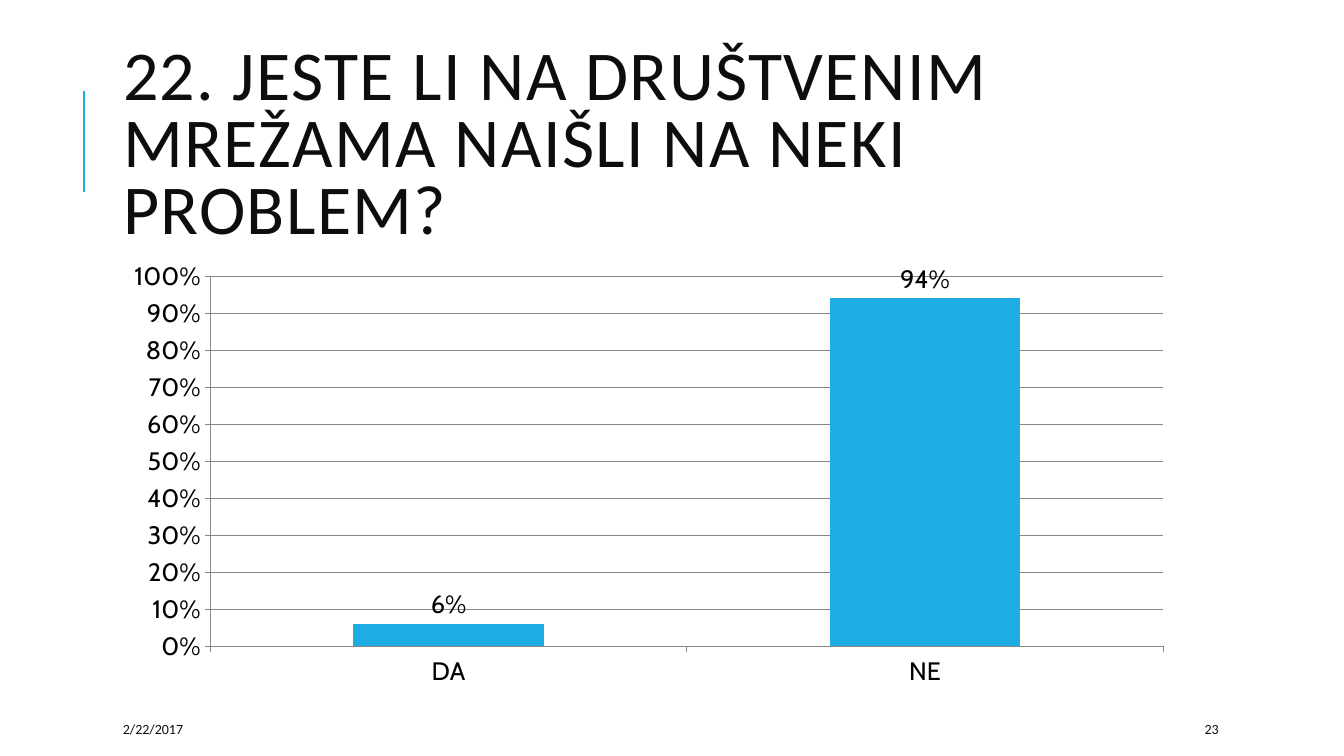
from dataclasses import dataclass

from pptx import Presentation
from pptx.chart.data import CategoryChartData
from pptx.dml.color import RGBColor
from pptx.enum.chart import XL_CHART_TYPE, XL_LABEL_POSITION, XL_TICK_MARK
from pptx.enum.shapes import MSO_CONNECTOR
from pptx.enum.text import MSO_ANCHOR, MSO_AUTO_SIZE, PP_ALIGN
from pptx.oxml.ns import qn
from pptx.util import Inches, Pt

COLUMNS = XL_CHART_TYPE.COLUMN_CLUSTERED
OUTSIDE_END = XL_LABEL_POSITION.OUTSIDE_END
TICK_OUTSIDE = XL_TICK_MARK.OUTSIDE
STRAIGHT = MSO_CONNECTOR.STRAIGHT
MIDDLE = MSO_ANCHOR.MIDDLE
LEFT = PP_ALIGN.LEFT
NO_AUTOFIT = MSO_AUTO_SIZE.NONE
TITLE_ONLY = 5


@dataclass(frozen=True)
class Theme:
    accent: RGBColor = RGBColor(0x1C, 0xAD, 0xE4)
    ink: RGBColor = RGBColor(0x0D, 0x0D, 0x0D)
    chart_ink: RGBColor = RGBColor(0, 0, 0)
    grid: RGBColor = RGBColor(0x87, 0x87, 0x87)
    text_font: str = "Calibri"
    chart_font: str = "Cabin"
    title_size: Pt = Pt(50)
    chart_size: Pt = Pt(18)
    footer_size: Pt = Pt(10)


THEME = Theme()


def place(shape, box):
    shape.left, shape.top, shape.width, shape.height = map(Inches, box)


def write_text(shape, text, size):
    """Fill a shape with one left-aligned, vertically centred paragraph."""
    frame = shape.text_frame
    frame.text = text
    frame.word_wrap = True
    frame.auto_size = NO_AUTOFIT
    frame.vertical_anchor = MIDDLE
    para = frame.paragraphs[0]
    para.alignment = LEFT
    span = para.runs[0]
    span.font.name = THEME.text_font
    span.font.size = size
    span.font.color.rgb = THEME.ink
    return para


def add_title(page, box, text):
    """Set the title, with an accent rule to its left."""
    title = page.shapes.title
    place(title, box)
    para = write_text(title, text, THEME.title_size)
    para.line_spacing = 0.8
    para.runs[0].font._element.set("spc", "100")

    left, top = box[:2]
    rule_x, rule_top = Inches(left - 0.29), Inches(top + 0.26)
    rule = page.shapes.add_connector(
        STRAIGHT, rule_x, rule_top + Inches(1), rule_x, rule_top)
    rule.line.color.rgb = THEME.accent
    rule.line.width = Pt(1.5)
    properties = rule._element.spPr
    properties.append(properties.makeelement(qn("a:effectLst"), {}))


def add_answer_chart(page, box, answers):
    data = CategoryChartData(number_format="0%")
    data.categories = list(answers)
    data.add_series("Series 1", list(answers.values()))
    chart = page.shapes.add_chart(COLUMNS, *map(Inches, box), data).chart
    chart.has_legend = False
    chart.has_title = False
    chart.font.name = THEME.chart_font
    chart.font.size = THEME.chart_size
    chart.font.color.rgb = THEME.chart_ink

    plot = chart.plots[0]
    plot.gap_width = 150
    plot.vary_by_categories = False
    fill = plot.series[0].format.fill
    fill.solid()
    fill.fore_color.rgb = THEME.accent
    plot.has_data_labels = True
    labels = plot.data_labels
    labels.show_value = True
    labels.number_format = "0%"
    labels.number_format_is_linked = False
    labels.position = OUTSIDE_END

    values = chart.value_axis
    values.minimum_scale, values.maximum_scale, values.major_unit = 0, 1, 0.1
    values.tick_labels.number_format = "0%"
    values.tick_labels.number_format_is_linked = False
    values.has_major_gridlines = True
    for axis in (chart.category_axis, values):
        axis.major_tick_mark = TICK_OUTSIDE
    for part in (chart.category_axis, values, values.major_gridlines):
        part.format.line.color.rgb = THEME.grid
        part.format.line.width = Pt(0.75)


def add_footer(page, box, date, number):
    """Put the date at the left end of the box and the page number at the right."""
    left, top, width, height = box
    number_width = 1.06
    number_left = left + width - number_width
    for text, text_left, text_width in (
            (date, left, 2.36), (number, number_left, number_width)):
        note = page.shapes.add_textbox(
            *map(Inches, (text_left, top, text_width, height)))
        write_text(note, text, THEME.footer_size)


def main():
    deck = Presentation()
    deck.slide_width, deck.slide_height = Inches(13.33), Inches(7.5)
    page = deck.slides.add_slide(deck.slide_layouts[TITLE_ONLY])
    add_title(page, (1.12, 0.64, 10.63, 1.64),
              "22. JESTE LI NA DRUŠTVENIM MREŽAMA NAIŠLI NA NEKI PROBLEM?")
    add_answer_chart(page, (1.12, 2.5, 10.63, 4.4), {"DA": 0.06, "NE": 0.94})
    add_footer(page, (1.12, 7.08, 11.79, 0.3), "2/22/2017", "23")
    deck.save("out.pptx")


if __name__ == "__main__":
    main()
